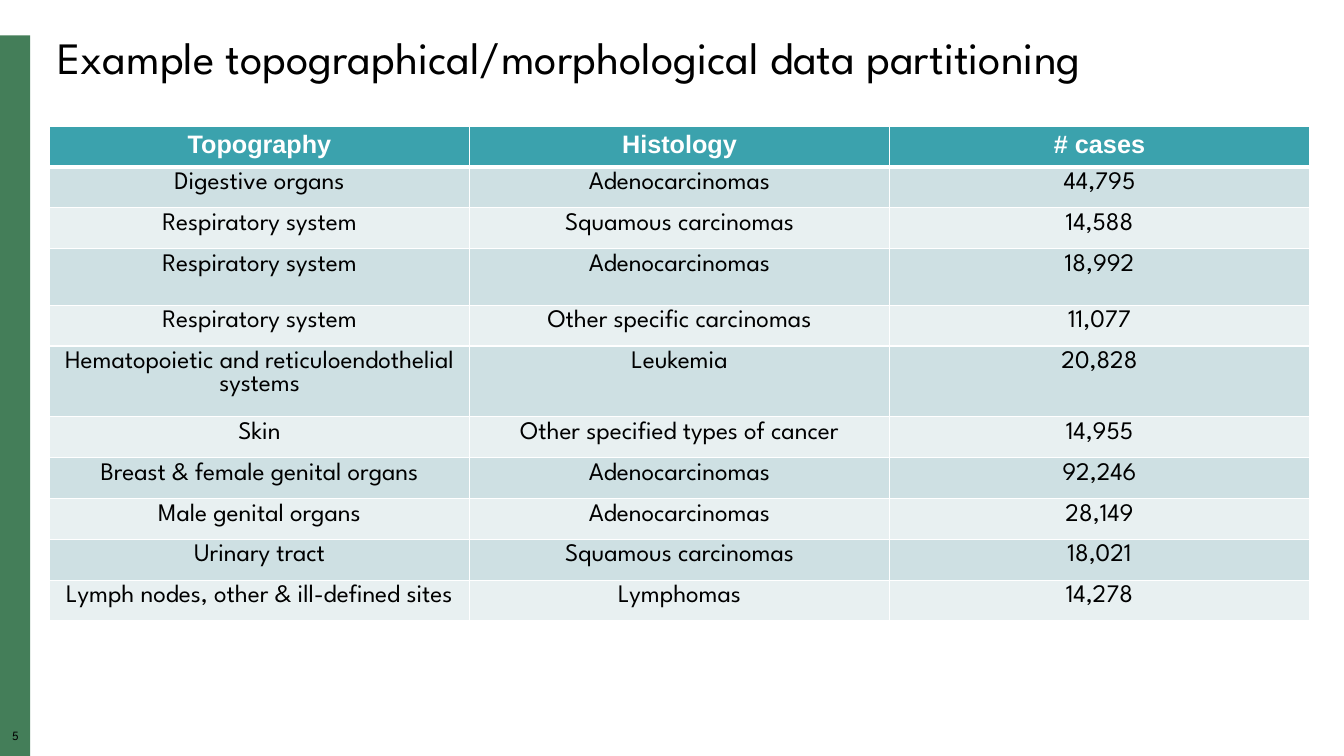
from lxml.etree import SubElement
from pptx import Presentation
from pptx.dml.color import RGBColor
from pptx.enum.shapes import MSO_SHAPE
from pptx.enum.text import MSO_ANCHOR, PP_ALIGN
from pptx.oxml.ns import qn
from pptx.util import Pt

COLORS = {
    "text": "000000",
    "white": "FFFFFF",
    "bar": "447E59",
    "header": "3BA2AD",
    "odd": "CEE0E3",
    "even": "E8F0F1",
}
HEADINGS = ("Topography", "Histology", "# cases")
CASES = (
    ("Digestive organs", "Adenocarcinomas", "44,795"),
    ("Respiratory system", "Squamous carcinomas", "14,588"),
    ("Respiratory system", "Adenocarcinomas", "18,992"),
    ("Respiratory system", "Other specific carcinomas", "11,077"),
    ("Hematopoietic and reticuloendothelial systems", "Leukemia", "20,828"),
    ("Skin", "Other specified types of cancer", "14,955"),
    ("Breast & female genital organs", "Adenocarcinomas", "92,246"),
    ("Male genital organs", "Adenocarcinomas", "28,149"),
    ("Urinary tract", "Squamous carcinomas", "18,021"),
    ("Lymph nodes, other & ill-defined sites", "Lymphomas", "14,278"),
)
ROW_HEIGHT = 29.2
TALL_ROW_HEIGHT = 40.4
TALL_ROWS = (3, 5)


def write_text(text_frame, text, font="League Spartan", size=18, color="text",
               bold=False, align=PP_ALIGN.CENTER, line_spacing=None):
    paragraph = text_frame.paragraphs[0]
    paragraph.alignment = align
    paragraph.line_spacing = line_spacing
    run = paragraph.add_run()
    run.text = text
    run.font.name = font
    run.font.size = Pt(size)
    run.font.bold = bold
    run.font.color.rgb = RGBColor.from_string(COLORS[color])


class SlideBuilder:
    def __init__(self, presentation):
        self.slide = presentation.slides.add_slide(presentation.slide_layouts[5])

    def title(self, text, left, top, width, height):
        shape = self.slide.shapes.title
        shape.left, shape.top = Pt(left), Pt(top)
        shape.width, shape.height = Pt(width), Pt(height)
        shape.text_frame.word_wrap = True
        shape.text_frame.vertical_anchor = MSO_ANCHOR.BOTTOM
        write_text(shape.text_frame, text, size=32, align=PP_ALIGN.LEFT, line_spacing=0.9)

    def bar(self, left, top, width, height):
        shape = self.slide.shapes.add_shape(
            MSO_SHAPE.RECTANGLE, Pt(left), Pt(top), Pt(width), Pt(height))
        shape.shadow.inherit = False
        shape.fill.solid()
        shape.fill.fore_color.rgb = RGBColor.from_string(COLORS["bar"])
        shape.line.fill.background()

    def page_number(self, text, left, top, width, height):
        shape = self.slide.shapes.add_textbox(Pt(left), Pt(top), Pt(width), Pt(height))
        frame = shape.text_frame
        frame.word_wrap = True
        frame.margin_left = frame.margin_right = frame.margin_top = frame.margin_bottom = 0
        write_text(frame, text, size=9, line_spacing=0.9)

    def borders(self, cell, top, bottom):
        properties = cell._tc.get_or_add_tcPr()
        for side, width in (("L", 1), ("R", 1), ("T", top), ("B", bottom)):
            line = SubElement(properties, qn(f"a:ln{side}"), w=str(Pt(width)))
            fill = SubElement(line, qn("a:solidFill"))
            SubElement(fill, qn("a:srgbClr"), val=COLORS["white"])

    def table(self, rows, left, top, column_width):
        heights = [TALL_ROW_HEIGHT if index in TALL_ROWS else ROW_HEIGHT
                   for index in range(len(rows))]
        columns = len(rows[0])
        table = self.slide.shapes.add_table(
            len(rows), columns, Pt(left), Pt(top),
            Pt(column_width * columns), Pt(sum(heights))).table
        for column in table.columns:
            column.width = Pt(column_width)
        for row_index, values in enumerate(rows):
            table.rows[row_index].height = Pt(heights[row_index])
            is_header = row_index == 0
            fill = "header" if is_header else "odd" if row_index % 2 else "even"
            style = {"font": "Arial", "color": "white", "bold": True} if is_header else {}
            for column_index, value in enumerate(values):
                cell = table.cell(row_index, column_index)
                self.borders(cell, top=3 if row_index == 1 else 1,
                             bottom=3 if is_header else 1)
                cell.fill.solid()
                cell.fill.fore_color.rgb = RGBColor.from_string(COLORS[fill])
                write_text(cell.text_frame, value, **style)


def main():
    presentation = Presentation()
    presentation.slide_width, presentation.slide_height = Pt(960), Pt(540)
    builder = SlideBuilder(presentation)
    builder.bar(0, 25.2, 21.6, 514.8)
    builder.page_number("5", 0, 521.5, 22, 12)
    builder.title("Example topographical/morphological data partitioning", 33.8, 21.6, 900, 42.5)
    builder.table((HEADINGS, *CASES), 35.4, 90, 300)
    presentation.save("out.pptx")


if __name__ == "__main__":
    main()
